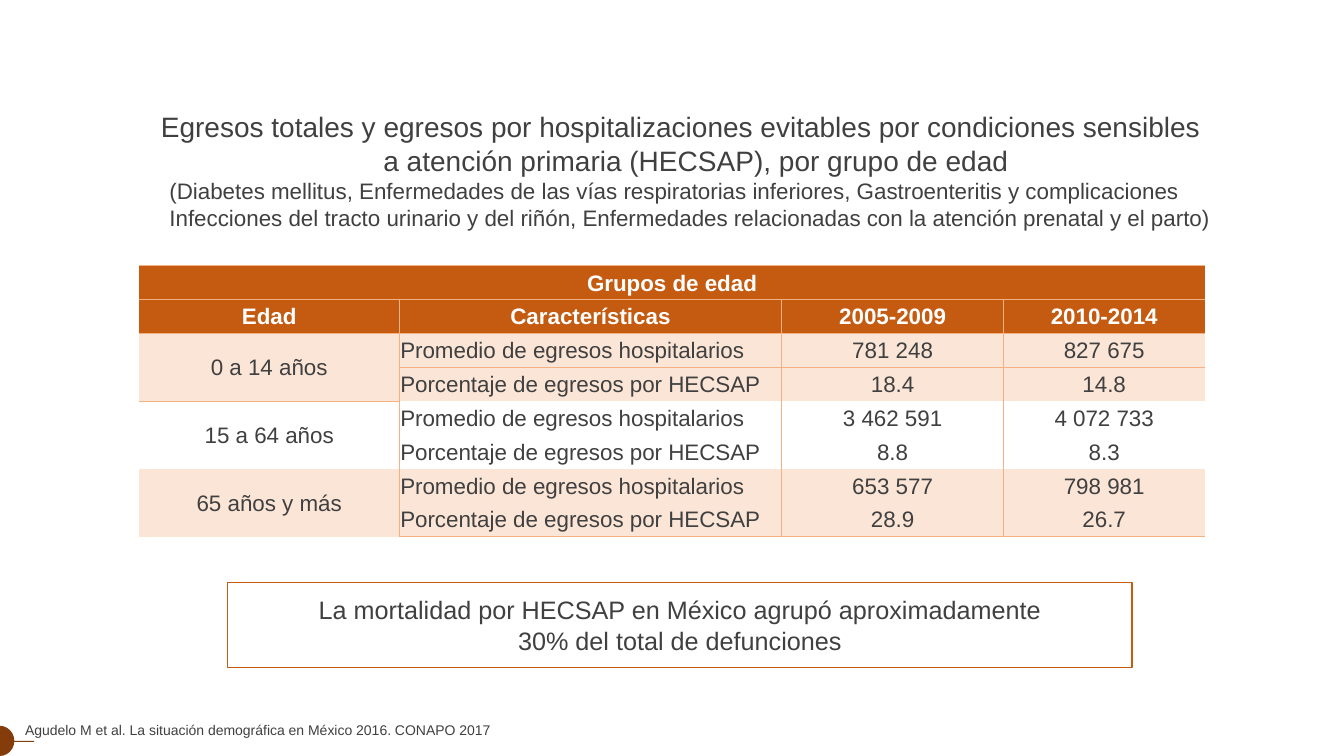
import pptx
import pptx.dml.color
import pptx.enum.shapes
import pptx.enum.text
import pptx.oxml
import pptx.oxml.ns
import pptx.util

Pt = pptx.util.Pt
ALIGN = pptx.enum.text.PP_ALIGN
ANCHOR = pptx.enum.text.MSO_ANCHOR
SHAPE = pptx.enum.shapes.MSO_SHAPE

# Content
TITLE = [  # text, size, centred, indent
    ("Egresos totales y egresos por hospitalizaciones evitables por condiciones sensibles", 20, True, 0),
    ("a atención primaria (HECSAP), por grupo de edad", 20, True, 21.6),
    ("(Diabetes mellitus, Enfermedades de las vías respiratorias inferiores, "
     "Gastroenteritis y complicaciones", 16, False, 21.6),
    ("Infecciones del tracto urinario y del riñón, Enfermedades relacionadas con "
     "la atención prenatal y el parto)", 16, False, 21.6),
]
TABLE_TITLE = "Grupos de edad"
HEADER = ["Edad", "Características", "2005-2009", "2010-2014"]
MEASURES = ["Promedio de egresos hospitalarios", "Porcentaje de egresos por HECSAP"]
GROUPS = [
    ("0 a 14 años", [("781 248", "827 675"), ("18.4", "14.8")]),
    ("15 a 64 años", [("3 462 591", "4 072 733"), ("8.8", "8.3")]),
    ("65 años y más", [("653 577", "798 981"), ("28.9", "26.7")]),
]
MESSAGE = ["La mortalidad por HECSAP en México agrupó aproximadamente",
           "30% del total de defunciones"]
SOURCE = "Agudelo M et al. La situación demográfica en México 2016. CONAPO 2017"

# Style
FONT, INK, WHITE = "Arial", "404040", "FFFFFF"
ORANGE, PEACH, RULE, BROWN = "C55A11", "FBE5D6", "F4B183", "843C0B"
COL_WIDTHS = [185.8, 273.2, 158.4, 143.9]
ROW_HEIGHT = 24.2
NO_STYLE = "{2D5ABB26-0587-4C30-8999-92F81FD0307C}"


def rgb(value):
    return pptx.dml.color.RGBColor.from_string(value)


def write(p, text, size, color=INK, align=ALIGN.LEFT, bold=False):
    p.text = text
    p.alignment = align
    p.font.name, p.font.size, p.font.bold = FONT, Pt(size), bold
    p.font.color.rgb = rgb(color)


def add_shape(kind, left, top, width, height, fill, line=None):
    sp = slide.shapes.add_shape(kind, Pt(left), Pt(top), Pt(width), Pt(height))
    sp.shadow.inherit = False
    sp.fill.solid()
    sp.fill.fore_color.rgb = rgb(fill)
    if line:
        sp.line.color.rgb = rgb(line)
        sp.line.width = Pt(1)
    else:
        sp.line.fill.background()
    return sp


def add_border(cell, side):
    cell._tc.get_or_add_tcPr().append(pptx.oxml.parse_xml(
        f'<a:ln{side} {pptx.oxml.ns.nsdecls("a")} w="12700"><a:solidFill>'
        f'<a:srgbClr val="{RULE}"/></a:solidFill></a:ln{side}>'))


def format_cell(row, col, text, fill, color=INK, align=ALIGN.CENTER, bold=False):
    cell = table.cell(row, col)
    last_row, last_col = len(table.rows) - 1, len(table.columns) - 1
    # Borders: inner verticals below the table title, rules around the header rows
    edges = {"L": row > 0 and col > 0, "R": row > 0 and col < last_col,
             "T": row <= 2, "B": row <= 1 or row == last_row}
    for side, drawn in edges.items():
        if drawn:
            add_border(cell, side)
    cell.fill.solid()
    cell.fill.fore_color.rgb = rgb(fill)
    cell.vertical_anchor = ANCHOR.MIDDLE
    cell.margin_left = cell.margin_right = cell.margin_top = Pt(0.72)
    cell.margin_bottom = 0
    write(cell.text_frame.paragraphs[0], text, 16, color, align, bold)


prs = pptx.Presentation()
prs.slide_width, prs.slide_height = Pt(960), Pt(540)
slide = prs.slides.add_slide(prs.slide_layouts[5])

# Title
title = slide.shapes.title
title.left, title.top, title.width, title.height = Pt(92.2), Pt(74.9), Pt(788.4), Pt(143.3)
tf = title.text_frame
tf.word_wrap = True
tf.auto_size = pptx.enum.text.MSO_AUTO_SIZE.NONE
tf.vertical_anchor = ANCHOR.TOP
for i, (text, size, centred, indent) in enumerate(TITLE):
    p = tf.add_paragraph() if i else tf.paragraphs[0]
    p._p.get_or_add_pPr().set("marL", str(Pt(indent)))
    write(p, text, size, align=ALIGN.CENTER if centred else ALIGN.LEFT)

# Table
n_rows = 2 + len(GROUPS) * len(MEASURES)
frame = slide.shapes.add_table(n_rows, len(HEADER), Pt(99.4), Pt(189.9),
                               Pt(sum(COL_WIDTHS)), Pt(n_rows * ROW_HEIGHT))
table = frame.table
table.horz_banding = table.first_row = False
table._tbl.tblPr.find(pptx.oxml.ns.qn("a:tableStyleId")).text = NO_STYLE
for col, width in zip(table.columns, COL_WIDTHS):
    col.width = Pt(width)
for row in table.rows:
    row.height = Pt(ROW_HEIGHT)

table.cell(0, 0).merge(table.cell(0, len(HEADER) - 1))
for c, heading in enumerate(HEADER):
    format_cell(0, c, "" if c else TABLE_TITLE, ORANGE, WHITE, bold=True)
    format_cell(1, c, heading, ORANGE, WHITE, bold=True)
for g, (age, values) in enumerate(GROUPS):
    top = 2 + g * len(MEASURES)
    fill = WHITE if g % 2 else PEACH
    table.cell(top, 0).merge(table.cell(top + len(MEASURES) - 1, 0))
    for m, measure in enumerate(MEASURES):
        format_cell(top + m, 0, "" if m else age, fill)
        format_cell(top + m, 1, measure, fill, align=ALIGN.LEFT)
        for c, value in enumerate(values[m], 2):
            format_cell(top + m, c, value, fill)

# Source line
box = slide.shapes.add_textbox(Pt(10.8), Pt(511.9), Pt(507.6), Pt(19.4))
box.text_frame.word_wrap = True
write(box.text_frame.paragraphs[0], SOURCE, 10)

# Corner ornament
add_shape(SHAPE.RECTANGLE, 1.4, 529.2, 23, 0.7, BROWN)
half_disc = add_shape(SHAPE.PIE, -10.8, 518.4, 21, 21.6, BROWN)
half_disc.adjustments[0], half_disc.adjustments[1] = 54, 162
half_disc.rotation = 180

# Key message
sp = add_shape(SHAPE.RECTANGLE, 162.7, 416.2, 645.8, 60.5, WHITE, ORANGE)
tf = sp.text_frame
tf.word_wrap = True
tf.vertical_anchor = ANCHOR.MIDDLE
for i, text in enumerate(MESSAGE):
    p = tf.add_paragraph() if i else tf.paragraphs[0]
    write(p, text, 18, align=ALIGN.CENTER)

prs.save("out.pptx")
